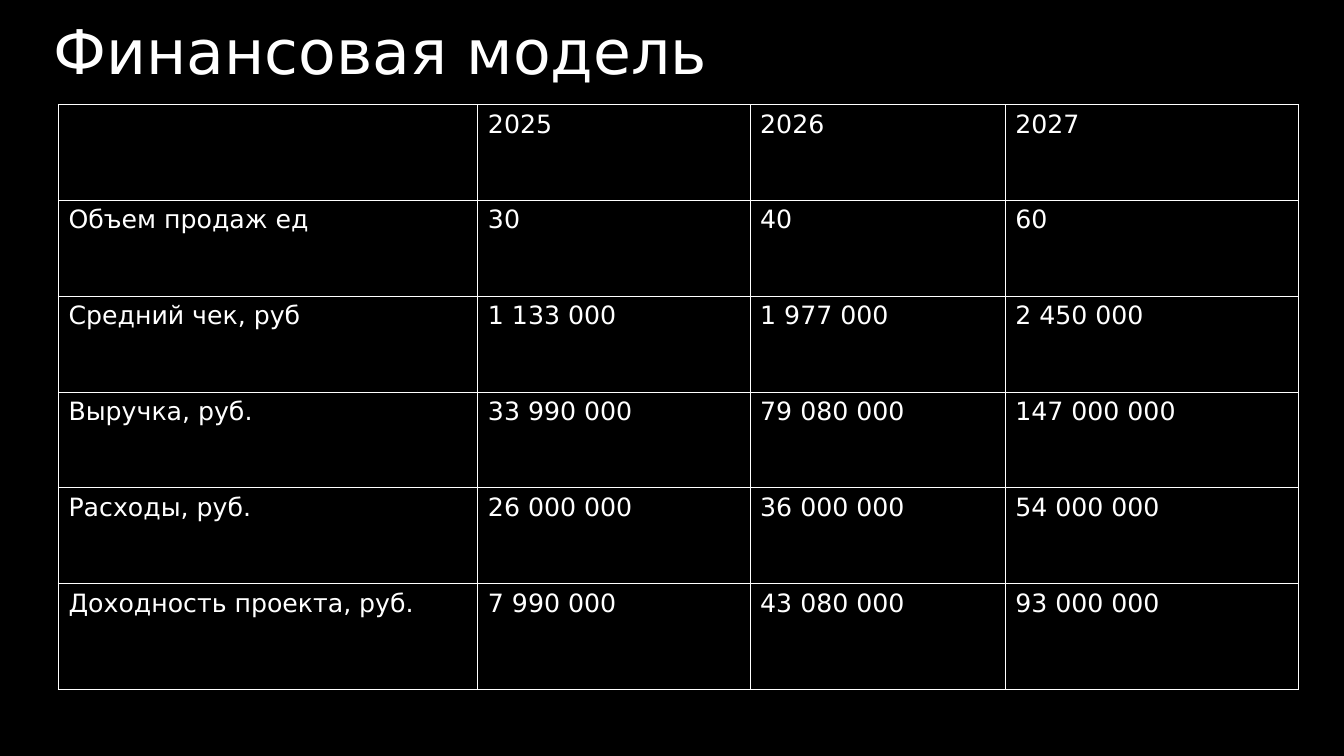
import pptx
import pptx.dml.color
import pptx.enum.text
import pptx.oxml
import pptx.oxml.ns
import pptx.util
from pptx.util import Inches

COLORS = {"background": "000000", "text": "FFFFFF", "border": "FFFFFF"}
FONT = "DejaVu Sans"
COLUMN_WIDTHS = [4.16, 2.7, 2.53, 2.91]
ROW_HEIGHTS = [0.95] * 5 + [1.05]
MODEL = [
    ["", "2025", "2026", "2027"],
    ["Объем продаж ед", "30", "40", "60"],
    ["Средний чек, руб", "1 133 000", "1 977 000", "2 450 000"],
    ["Выручка, руб.", "33 990 000", "79 080 000", "147 000 000"],
    ["Расходы, руб.", "26 000 000", "36 000 000", "54 000 000"],
    ["Доходность проекта, руб.", "7 990 000", "43 080 000", "93 000 000"],
]


def rgb(name):
    """Return the named colour."""
    return pptx.dml.color.RGBColor.from_string(COLORS[name])


def fill_solid(fill, name):
    """Give a fill one named colour."""
    fill.solid()
    fill.fore_color.rgb = rgb(name)


def format_text(paragraph, size):
    """Set the font of a paragraph and its runs."""
    for font in [paragraph.font] + [run.font for run in paragraph.runs]:
        font.name = FONT
        font.size = pptx.util.Pt(size)
        font.bold = False
        font.color.rgb = rgb("text")


def add_borders(cell):
    """Draw a thin line on every side of a cell."""
    properties = cell._tc.get_or_add_tcPr()
    for position, side in enumerate(("lnL", "lnR", "lnT", "lnB")):
        border = pptx.oxml.parse_xml(
            f'<a:{side} {pptx.oxml.ns.nsdecls("a")} w="12700"><a:solidFill>'
            f'<a:srgbClr val="{COLORS["border"]}"/></a:solidFill></a:{side}>'
        )
        properties.insert(position, border)


def set_title(slide, text):
    """Place and format the slide title."""
    title = slide.shapes.title
    title.left, title.top = Inches(0.43), Inches(0.16)
    title.width, title.height = Inches(10), Inches(1.38)
    frame = title.text_frame
    frame.text = text
    frame.word_wrap = True
    frame.auto_size = pptx.enum.text.MSO_AUTO_SIZE.NONE
    frame.vertical_anchor = pptx.enum.text.MSO_ANCHOR.TOP
    heading = frame.paragraphs[0]
    heading.alignment = pptx.enum.text.PP_ALIGN.LEFT
    heading.line_spacing = 0.9
    format_text(heading, 44)


def add_model_table(slide):
    """Add the table of the financial model."""
    model = slide.shapes.add_table(
        len(MODEL), len(COLUMN_WIDTHS), Inches(0.58), Inches(1.04),
        Inches(sum(COLUMN_WIDTHS)), Inches(sum(ROW_HEIGHTS)),
    ).table
    model.horz_banding = False
    for column, width in zip(model.columns, COLUMN_WIDTHS):
        column.width = Inches(width)
    for row, height, values in zip(model.rows, ROW_HEIGHTS, MODEL):
        row.height = Inches(height)
        for cell, value in zip(row.cells, values):
            cell.text_frame.text = value
            format_text(cell.text_frame.paragraphs[0], 18)
            fill_solid(cell.fill, "background")
            add_borders(cell)


def main():
    """Build and save the slide."""
    deck = pptx.Presentation()
    deck.slide_width, deck.slide_height = Inches(13.33), Inches(7.5)
    slide = deck.slides.add_slide(deck.slide_layouts.get_by_name("Title Only"))
    fill_solid(slide.background.fill, "background")
    set_title(slide, "Финансовая модель")
    add_model_table(slide)
    deck.save("out.pptx")


if __name__ == "__main__":
    main()
